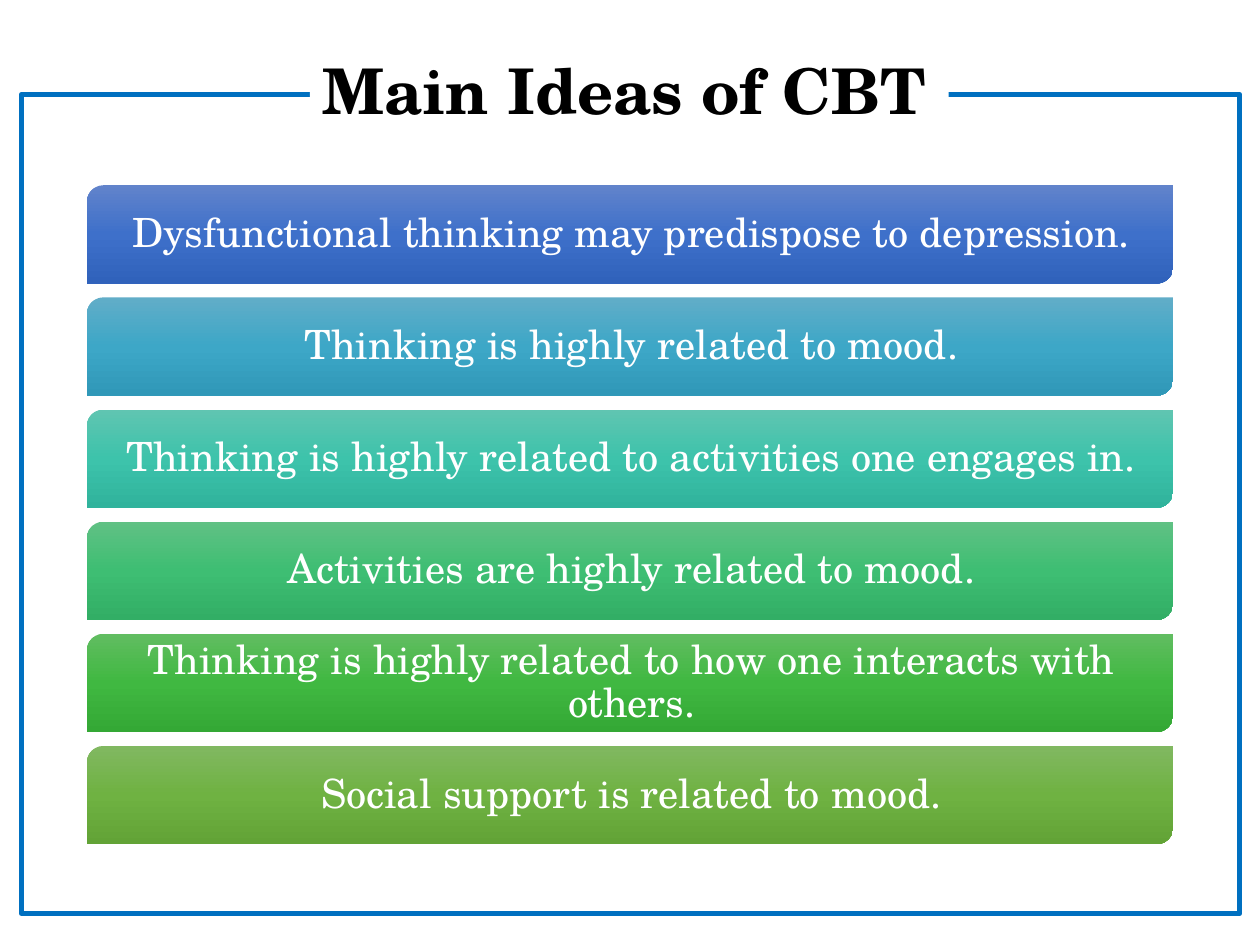
from copy import deepcopy
from dataclasses import dataclass

from pptx import Presentation
from pptx.dml.color import RGBColor
from pptx.enum.shapes import MSO_SHAPE
from pptx.enum.text import MSO_ANCHOR, PP_ALIGN
from pptx.oxml.ns import qn
from pptx.util import Inches, Pt

RECT = MSO_SHAPE.RECTANGLE
BAR = MSO_SHAPE.ROUND_2_DIAG_RECTANGLE
MIDDLE = MSO_ANCHOR.MIDDLE
LEFT, CENTER = PP_ALIGN.LEFT, PP_ALIGN.CENTER


@dataclass(frozen=True)
class Theme:
    """Colours, font and type sizes of the slide."""
    font: str = "TeX Gyre Schola"
    title_size: int = 36
    idea_size: int = 23
    frame: str = "0070C0"
    paper: str = "FFFFFF"
    ink: str = "000000"
    bars: tuple = (
        ("6183CB", "3E70CA", "3062BB"),
        ("61ADC8", "3DA7C7", "3098B8"),
        ("60C5B1", "3DC3AB", "30B39C"),
        ("60C184", "3EBE73", "32AE65"),
        ("61BD61", "40B841", "34A835"),
        ("81B861", "6FB242", "62A336"),
    )


THEME = Theme()
TITLE = "Main Ideas of CBT"
IDEAS = (
    "Dysfunctional thinking may predispose to depression.",
    "Thinking is highly related to mood.",
    "Thinking is highly related to activities one engages in.",
    "Activities are highly related to mood.",
    "Thinking is highly related to how one interacts with others.",
    "Social support is related to mood.",
)


def add_box(s, kind, x, y, w, h):
    """Add a preset shape without shadow or outline, measured in inches."""
    sp = s.shapes.add_shape(kind, Inches(x), Inches(y), Inches(w), Inches(h))
    sp.shadow.inherit = False
    sp.line.fill.background()
    return sp


def set_text(sp, text, size, color, align, bold=False):
    """Write one vertically centred paragraph into a shape."""
    tf = sp.text_frame
    tf.word_wrap = True
    tf.vertical_anchor = MIDDLE
    p = tf.paragraphs[0]
    p.text = text
    p.alignment = align
    p.line_spacing = 0.9
    p.font.name = THEME.font
    p.font.size = Pt(size)
    p.font.bold = bold
    p.font.color.rgb = RGBColor.from_string(color)


def fill_gradient(sp, colors):
    """Fill a shape from top to bottom with evenly spaced colours."""
    sp.fill.gradient()
    sp.fill.gradient_angle = 270
    stops = sp._element.spPr.find(qn("a:gradFill")).find(qn("a:gsLst"))
    while len(stops) < len(colors):
        stops.append(deepcopy(stops[0]))
    for i, (stop, color) in enumerate(zip(sp.fill.gradient_stops, colors)):
        stop.position = i / (len(colors) - 1)
        stop.color.rgb = RGBColor.from_string(color)


def add_ideas(s, x, y, w, h, gap=0.11):
    """Stack one gradient bar per idea inside the given box."""
    bar_h = (h - gap * (len(IDEAS) - 1)) / len(IDEAS)
    for i, (idea, colors) in enumerate(zip(IDEAS, THEME.bars)):
        sp = add_box(s, BAR, x, y + i * (bar_h + gap), w, bar_h)
        fill_gradient(sp, colors)
        set_text(sp, idea, THEME.idea_size, THEME.paper, CENTER)
        tf = sp.text_frame
        tf.margin_left, tf.margin_right = Inches(0.03), 0
        tf.margin_top = tf.margin_bottom = Inches(0.02)


def add_frame(s, x, y, w, h):
    """Draw the outlined frame around the content."""
    sp = add_box(s, RECT, x, y, w, h)
    sp.fill.background()
    sp.line.color.rgb = RGBColor.from_string(THEME.frame)
    sp.line.width = Pt(3)


def add_title(s, x, y, w, h):
    """Place the title on a plain panel that interrupts the frame."""
    sp = add_box(s, RECT, x, y, w, h)
    sp.fill.solid()
    sp.fill.fore_color.rgb = RGBColor.from_string(THEME.paper)
    set_text(sp, TITLE, THEME.title_size, THEME.ink, LEFT, bold=True)


def main():
    """Build the slide and save it."""
    prs = Presentation()
    prs.slide_width, prs.slide_height = Inches(10), Inches(7.5)
    s = prs.slides.add_slide(prs.slide_layouts[6])
    add_ideas(s, 0.69, 1.47, 8.62, 5.23)
    add_frame(s, 0.17, 0.75, 9.67, 6.5)
    add_title(s, 2.46, 0.5, 5.07, 0.5)
    prs.save("out.pptx")


if __name__ == "__main__":
    main()
